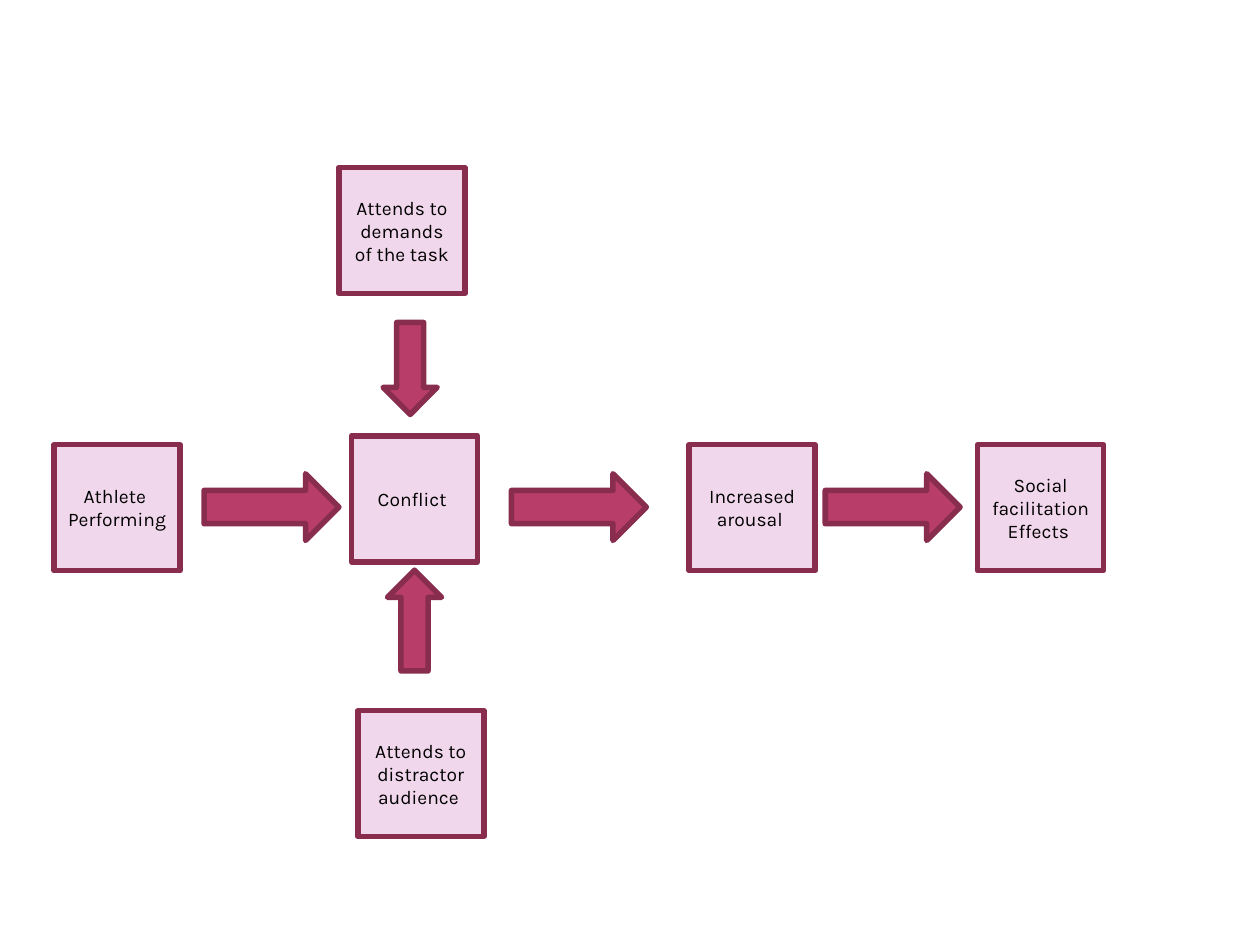
from lxml.etree import SubElement
from pptx import Presentation
from pptx.dml.color import RGBColor
from pptx.enum.shapes import MSO_SHAPE as SHAPE
from pptx.enum.text import MSO_ANCHOR as ANCHOR, PP_ALIGN as ALIGN
from pptx.oxml.ns import qn
from pptx.util import Inches, Pt


def rgb(value):
    return RGBColor.from_string(value)


def write(tf, text, size=11, font="Karla", color="000000", align=ALIGN.CENTER):
    """Fill a text frame, one paragraph for each line of text."""
    tf.word_wrap = True
    tf.vertical_anchor = ANCHOR.MIDDLE
    for i, line in enumerate(text.split("\n")):
        p = tf.add_paragraph() if i else tf.paragraphs[0]
        p.alignment = align
        r = p.add_run()
        r.text = line
        r.font.size, r.font.name = Pt(size), font
        r.font.color.rgb = rgb(color)


class Diagram:
    """Style and current slide of the flow diagram."""
    box_fill, arrow_fill, outline = "F1D7EC", "B83D68", "882D4D"
    line_width = 3.15
    box_size = 1

    def __init__(self, slide):
        self.s = slide

    def shape(self, kind, x, y, w, h, fill):
        sp = self.s.shapes.add_shape(kind, Inches(x), Inches(y), Inches(w), Inches(h))
        sp.shadow.inherit = False
        sp.fill.solid()
        sp.fill.fore_color.rgb = rgb(fill)
        sp.line.color.rgb = rgb(self.outline)
        sp.line.width = Pt(self.line_width)
        SubElement(sp.element.spPr.find(qn("a:ln")), qn("a:round"))
        return sp

    def box(self, text, x, y):
        sp = self.shape(SHAPE.RECTANGLE, x, y, self.box_size, self.box_size, self.box_fill)
        write(sp.text_frame, text)

    def arrow(self, x, y, w=1.07, h=0.53, rotation=0):
        sp = self.shape(SHAPE.RIGHT_ARROW, x, y, w, h, self.arrow_fill)
        sp.rotation = rotation


def main():
    prs = Presentation()
    prs.slide_width, prs.slide_height = Inches(10), Inches(7.5)
    d = Diagram(prs.slides.add_slide(prs.slide_layouts[6]))

    row_y = 3.53
    for text, x, y in (
        ("Athlete \nPerforming ", 0.43, row_y),
        ("Attends to distractor audience ", 2.84, 5.64),
        ("Conflict ", 2.79, 3.46),
        ("Attends to demands of the task", 2.69, 1.33),
        ("Increased arousal ", 5.47, row_y),
        ("Social facilitation\nEffects ", 7.76, row_y),
    ):
        d.box(text, x, y)

    for x in (1.62, 4.06, 6.55):
        d.arrow(x, 3.76)
    d.arrow(2.89, 2.71, w=0.73, h=0.43, rotation=90)
    d.arrow(2.89, 4.71, w=0.8, h=0.43, rotation=270)

    prs.save("out.pptx")


if __name__ == "__main__":
    main()
